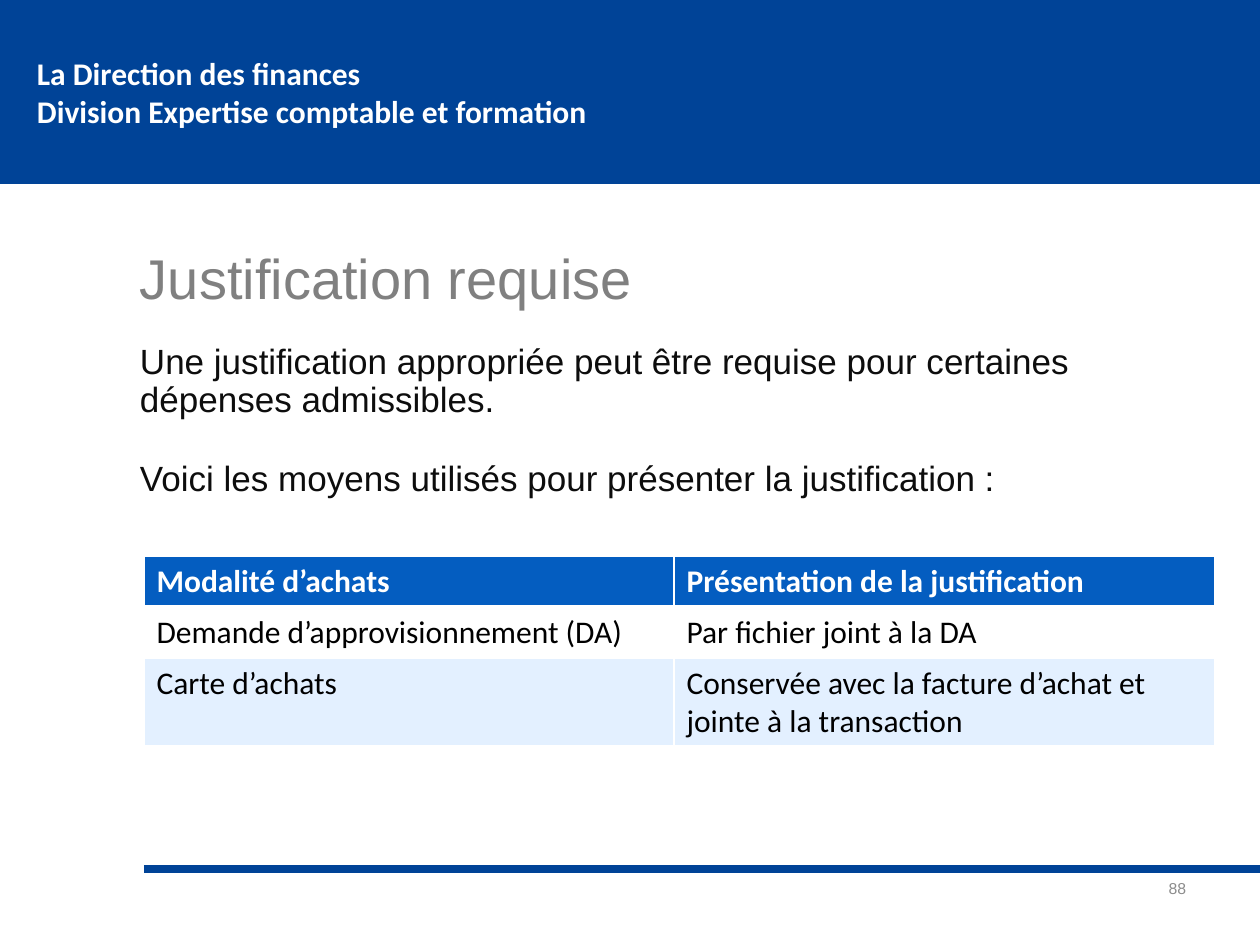
from dataclasses import dataclass

from lxml.etree import SubElement
from pptx import Presentation
from pptx.dml.color import RGBColor
from pptx.enum.shapes import MSO_CONNECTOR as Connector, MSO_SHAPE as Shape
from pptx.enum.text import MSO_ANCHOR as Anchor, PP_ALIGN as Align
from pptx.oxml.ns import qn
from pptx.util import Emu, Pt

HEADER = ["La Direction des finances", "Division Expertise comptable et formation"]
TITLE = ["Justification requise"]
BODY = [
    "Une justification appropriée peut être requise pour certaines dépenses admissibles.",
    "Voici les moyens utilisés pour présenter la justification :",
]
PAGE_NUMBER = ["88"]
TABLE = [
    ("Modalité d’achats", "Présentation de la justification"),
    ("Demande d’approvisionnement (DA)", "Par fichier joint à la DA"),
    ("Carte d’achats", "Conservée avec la facture d’achat et jointe à la transaction"),
]
COLUMN_WIDTHS = [530, 541]
ROW_HEIGHTS = [51, 51, 88]


@dataclass(frozen=True)
class Theme:
    navy: str = "004397"
    header_row: str = "045DC0"
    band: str = "E3F0FF"
    white: str = "FFFFFF"
    black: str = "000000"
    ink: str = "0D0D0D"
    gray: str = "808080"
    light_gray: str = "8C8C8C"
    text_font: str = "Arial"
    table_font: str = "Calibri"
    title_size: int = 32
    body_size: int = 20
    table_size: int = 18
    number_size: int = 9
    rule_width: float = 4.5
    border: int = 1
    heavy_border: int = 3


THEME = Theme()


def px(value):
    return Emu(round(value * 914400 / 126))


def color(value):
    return RGBColor.from_string(value)


def style(paragraph, font, size, ink, bold=False):
    paragraph.font.name = font
    paragraph.font.size = Pt(size)
    paragraph.font.color.rgb = color(ink)
    paragraph.font.bold = bold


def write(frame, lines, font, size, ink, bold=False, align=Align.LEFT, spacing=1.0, before=0):
    frame.word_wrap = True
    for index, line in enumerate(lines):
        paragraph = frame.add_paragraph() if index else frame.paragraphs[0]
        paragraph.text = line
        paragraph.alignment = align
        paragraph.line_spacing = spacing
        paragraph.space_before = Pt(before)
        style(paragraph, font, size, ink, bold)


def add_text(slide, box, lines, size, ink, anchor=Anchor.TOP, **layout):
    frame = slide.shapes.add_textbox(*map(px, box)).text_frame
    frame.margin_left = frame.margin_top = frame.margin_right = frame.margin_bottom = 0
    frame.vertical_anchor = anchor
    write(frame, lines, THEME.text_font, size, ink, **layout)


def add_header(slide):
    banner = slide.shapes.add_shape(Shape.RECTANGLE, 0, 0, px(1260), px(184))
    banner.shadow.inherit = False
    banner.fill.solid()
    banner.fill.fore_color.rgb = color(THEME.navy)
    banner.line.fill.background()
    frame = banner.text_frame
    frame.margin_left = px(37)
    frame.vertical_anchor = Anchor.MIDDLE
    write(frame, HEADER, THEME.table_font, THEME.table_size, THEME.white, bold=True)


def add_footer_rule(slide):
    rule = slide.shapes.add_connector(Connector.STRAIGHT, px(144), px(869), px(1260), px(869))
    rule.line.color.rgb = color(THEME.navy)
    rule.line.width = Pt(THEME.rule_width)
    SubElement(rule._element.spPr, qn("a:effectLst"))


def set_borders(cell, **widths):
    """Draw white borders; widths in points are keyed L, R, T and B."""
    properties = cell._tc.get_or_add_tcPr()
    for side, width in widths.items():
        line = SubElement(properties, qn(f"a:ln{side}"), w=str(Pt(width)))
        SubElement(SubElement(line, qn("a:solidFill")), qn("a:srgbClr"), val=THEME.white)


def add_justification_table(slide):
    size = len(TABLE), len(COLUMN_WIDTHS)
    box = 144, 556, sum(COLUMN_WIDTHS), sum(ROW_HEIGHTS)
    table = slide.shapes.add_table(*size, *map(px, box)).table
    for column, width in zip(table.columns, COLUMN_WIDTHS):
        column.width = px(width)
    for row, height in zip(table.rows, ROW_HEIGHTS):
        row.height = px(height)
    fills = [THEME.header_row, THEME.white, THEME.band]
    thin, heavy = THEME.border, THEME.heavy_border
    for row_index, texts in enumerate(TABLE):
        is_header = row_index == 0
        for column_index, text in enumerate(texts):
            cell = table.cell(row_index, column_index)
            set_borders(cell, L=thin, R=thin, T=heavy if row_index == 1 else thin,
                        B=heavy if is_header else thin)
            cell.fill.solid()
            cell.fill.fore_color.rgb = color(fills[row_index])
            cell.text = text
            style(cell.text_frame.paragraphs[0], THEME.table_font, THEME.table_size,
                  THEME.white if is_header else THEME.black, is_header)


def main():
    presentation = Presentation()
    presentation.slide_width, presentation.slide_height = px(1260), px(945)
    slide = presentation.slides.add_slide(presentation.slide_layouts[6])
    add_header(slide)
    add_footer_rule(slide)
    add_text(slide, (140, 344, 1042, 476), BODY, THEME.body_size, THEME.ink,
             spacing=0.9, before=24)
    add_text(slide, (140, 254, 1042, 59), TITLE, THEME.title_size, THEME.gray, spacing=0.85)
    add_justification_table(slide)
    add_text(slide, (1126, 879, 60, 25), PAGE_NUMBER, THEME.number_size, THEME.light_gray,
             anchor=Anchor.MIDDLE, align=Align.RIGHT, spacing=0.5)
    presentation.save("out.pptx")


if __name__ == "__main__":
    main()
